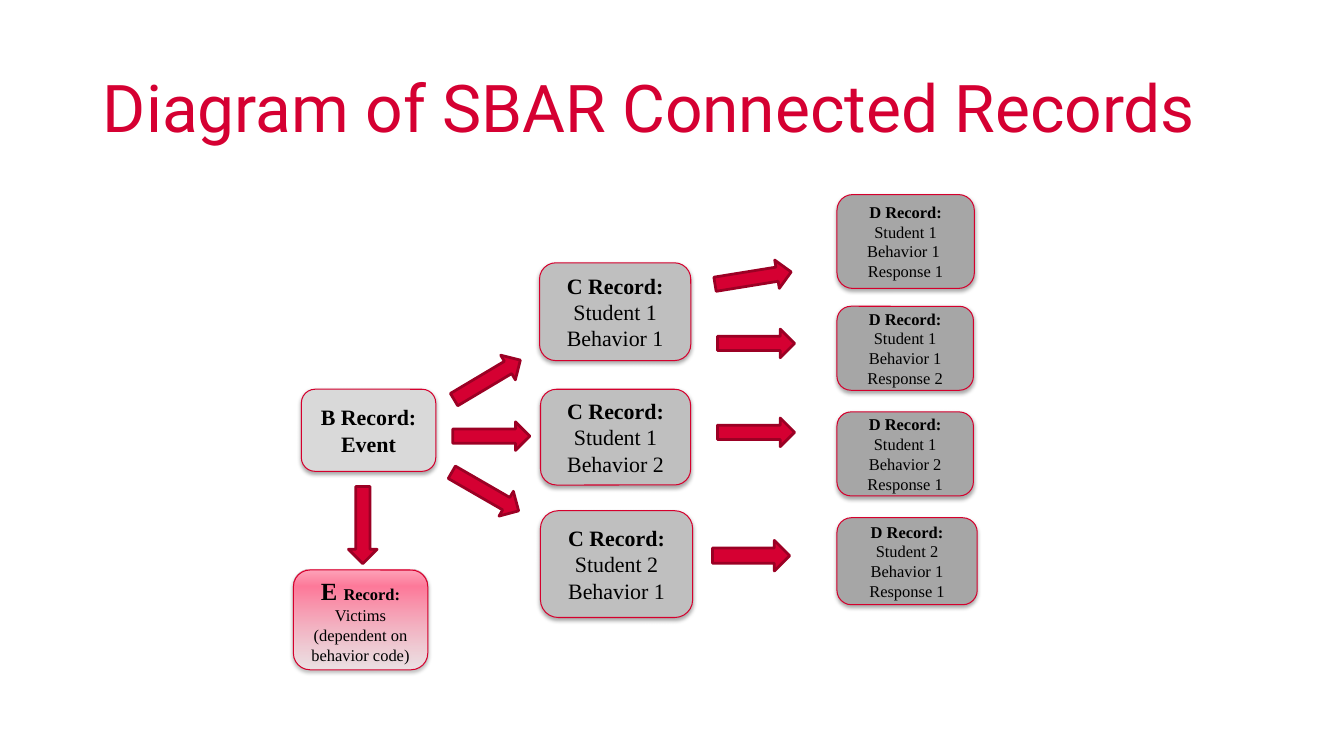
"""Build the slide that shows how SBAR records connect."""
from lxml import etree
from pptx import Presentation
from pptx.dml.color import RGBColor
from pptx.enum import shapes, text
from pptx.oxml.ns import qn
from pptx.util import Pt

COLORS = {
    "title": "D50032", "arrow": "D50032", "arrow_edge": "9B0024",
    "box_edge": "D5002D", "event": "D9D9D9", "student": "BFBFBF",
    "response": "A6A6A6", "ink": "000000", "shadow": "000000",
}
VICTIM_STOPS = [(0, "FFF0F4", 69), (83, "FF7999", 100), (100, "FFA6BB", 100)]
BOX_FONT = "Times New Roman"
ARROW_WIDTH, ARROW_HEIGHT = 56.2, 20.9

STUDENT_RECORDS = [
    ((393.1, 191.5, 110.2, 71.3), ["Student 1 Behavior 1"]),
    ((393.8, 283.7, 109.4, 69.8), ["Student 1 Behavior 2"]),
    ((393.8, 372.2, 110.9, 77.8), ["Student 2", "Behavior 1"]),
]
RESPONSE_RECORDS = [
    ((609.8, 141.8, 100.1, 68.4), ["Student 1 Behavior 1 ", "Response 1"]),
    ((609.8, 223.2, 99.4, 61.2), ["Student 1 Behavior 1 Response 2"]),
    ((609.8, 300.2, 99.4, 61.2), ["Student 1 Behavior 2 Response 1"]),
    ((609.8, 377.3, 102.2, 63.4), ["Student 2 Behavior 1 Response 1"]),
]
ARROWS = [
    (329.8, 307.4, 0, ARROW_HEIGHT),
    (326.9, 266.4, 329.2, ARROW_HEIGHT),
    (325.4, 347.8, 30, ARROW_HEIGHT),
    (236.2, 372.2, 90, ARROW_HEIGHT),
    (519.1, 393.8, 0, 22.3),
    (522.7, 304.6, 0, ARROW_HEIGHT),
    (522.7, 239.8, 0, ARROW_HEIGHT),
    (520.6, 192.2, 350.8, ARROW_HEIGHT),
]


def color(name):
    """Return the named colour."""
    return RGBColor.from_string(COLORS[name])


def add_xml_color(parent, value, opacity):
    """Add a colour with an opacity in percent to an XML element."""
    element = etree.SubElement(parent, qn("a:srgbClr"), val=value)
    etree.SubElement(element, qn("a:alpha"), val=str(opacity * 1000))


def add_run(paragraph, words, size, font, ink, bold=False):
    """Add one formatted run to a paragraph."""
    run = paragraph.add_run()
    run.text = words
    run.font.size = Pt(size)
    run.font.name = font
    run.font.bold = bold
    run.font.color.rgb = color(ink)


def add_title(slide, words):
    """Place and fill the title placeholder."""
    title = slide.shapes.title
    title.left, title.top, title.width, title.height = map(Pt, (67.7, 28.8, 844.6, 104.4))
    frame = title.text_frame
    frame.word_wrap = True
    frame.vertical_anchor = text.MSO_ANCHOR.MIDDLE
    paragraph = frame.paragraphs[0]
    paragraph.alignment = text.PP_ALIGN.LEFT
    paragraph.line_spacing = 0.9
    add_run(paragraph, words, 48, "Roboto", "title")


def add_shadow(shape):
    """Give a shape a soft shadow below it."""
    shape.shadow.inherit = False
    effects = shape._element.spPr.find(qn("a:effectLst"))
    shadow = etree.SubElement(
        effects, qn("a:outerShdw"), blurRad=str(Pt(3.1)), dist=str(Pt(1.8)),
        dir="5400000", rotWithShape="0")
    add_xml_color(shadow, COLORS["shadow"], 35)


def fill_gradient(shape, stops):
    """Fill a shape with gradient stops that run from bottom to top."""
    shape.fill.gradient()
    shape.fill.gradient_angle = 90
    stop_list = shape._element.spPr.find(".//" + qn("a:gsLst"))
    for old_stop in list(stop_list):
        stop_list.remove(old_stop)
    for position, value, opacity in stops:
        stop = etree.SubElement(stop_list, qn("a:gs"), pos=str(position * 1000))
        add_xml_color(stop, value, opacity)


def add_record(slide, bounds, fill, paragraphs):
    """Add a rounded box; each paragraph lists (words, size, bold) runs."""
    box = slide.shapes.add_shape(shapes.MSO_SHAPE.ROUNDED_RECTANGLE, *map(Pt, bounds))
    if fill == "victims":
        fill_gradient(box, VICTIM_STOPS)
    else:
        box.fill.solid()
        box.fill.fore_color.rgb = color(fill)
    box.line.color.rgb = color("box_edge")
    box.line.width = Pt(0.75)
    add_shadow(box)
    frame = box.text_frame
    frame.word_wrap = True
    frame.vertical_anchor = text.MSO_ANCHOR.MIDDLE
    for index, runs in enumerate(paragraphs):
        paragraph = frame.add_paragraph() if index else frame.paragraphs[0]
        paragraph.alignment = text.PP_ALIGN.CENTER
        for words, size, bold in runs:
            add_run(paragraph, words, size, BOX_FONT, "ink", bold)


def add_record_column(slide, records, fill, heading, size):
    """Add boxes that share a bold heading, a fill and a text size."""
    for bounds, lines in records:
        paragraphs = [[(line, size, False)] for line in lines]
        paragraphs[0].insert(0, (heading, size, True))
        add_record(slide, bounds, fill, paragraphs)


def add_arrow(slide, left, top, rotation, height):
    """Add a block arrow turned clockwise by the rotation."""
    arrow = slide.shapes.add_shape(
        shapes.MSO_SHAPE.RIGHT_ARROW, Pt(left), Pt(top), Pt(ARROW_WIDTH), Pt(height))
    arrow.rotation = rotation
    arrow.shadow.inherit = False
    arrow.fill.solid()
    arrow.fill.fore_color.rgb = color("arrow")
    arrow.line.color.rgb = color("arrow_edge")
    arrow.line.width = Pt(2)


def main():
    """Build and save the slide."""
    presentation = Presentation()
    presentation.slide_width, presentation.slide_height = Pt(979.2), Pt(540)
    slide = presentation.slides.add_slide(presentation.slide_layouts[5])
    add_title(slide, "Diagram of SBAR Connected Records")
    add_record(slide, (219.6, 283.7, 97.9, 59.8), "event", [[("B Record: Event", 16, True)]])
    add_record_column(slide, STUDENT_RECORDS, "student", "C Record: ", 16)
    add_record_column(slide, RESPONSE_RECORDS, "response", "D Record: ", 12)
    add_record(slide, (213.8, 415.4, 97.9, 72.7), "victims", [
        [("E ", 18, True), ("Record: ", 12, True), ("Victims", 12, False)],
        [("(dependent on behavior code)", 12, False)],
    ])
    for arrow in ARROWS:
        add_arrow(slide, *arrow)
    presentation.save("out.pptx")


if __name__ == "__main__":
    main()
